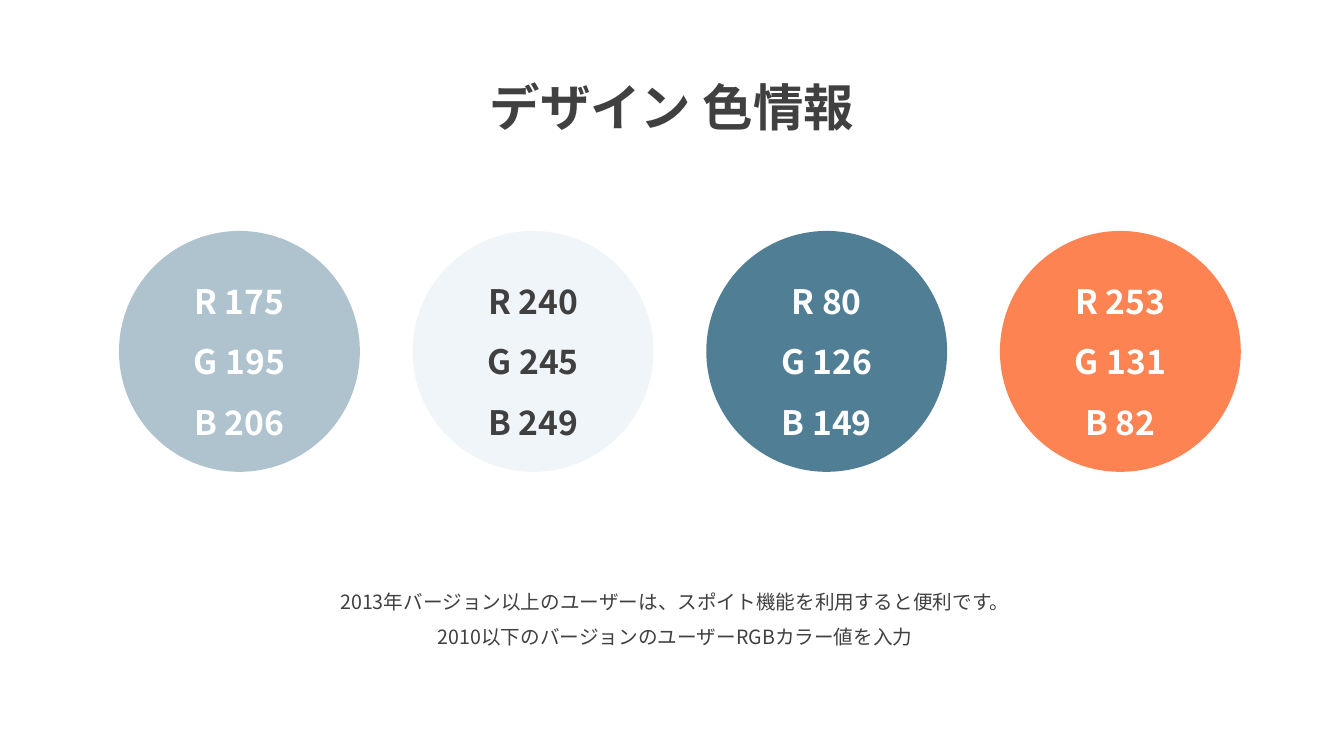
from dataclasses import dataclass

from lxml import etree
from pptx import Presentation
from pptx.dml.color import RGBColor
from pptx.enum.shapes import MSO_SHAPE
from pptx.enum.text import MSO_ANCHOR, MSO_AUTO_SIZE, PP_ALIGN
from pptx.oxml.ns import qn
from pptx.util import Cm, Pt

OVAL = MSO_SHAPE.OVAL
CENTER = PP_ALIGN.CENTER
TOP, MIDDLE = MSO_ANCHOR.TOP, MSO_ANCHOR.MIDDLE
FIXED, GROW = MSO_AUTO_SIZE.NONE, MSO_AUTO_SIZE.SHAPE_TO_FIT_TEXT

TITLE = ["デザイン 色情報"]
NOTES = [
    "2013年バージョン以上のユーザーは、スポイト機能を利用すると便利です。",
    "2010以下のバージョンのユーザーRGBカラー値を入力",
]
SWATCHES = [(175, 195, 206), (240, 245, 249), (80, 126, 149), (253, 131, 82)]

TITLE_BOX = (10.77, 1.02, 12.32, 2.31)
NOTES_BOX = (6.4, 14.43, 21.23, 1.96)
SWATCH_LEFT, SWATCH_TOP = 3.0, 5.82
SWATCH_SIZE, SWATCH_PITCH = 6.07, 7.4


@dataclass(frozen=True)
class Theme:
    font: str = "Noto Sans CJK KR"
    dark: RGBColor = RGBColor(64, 64, 64)
    light: RGBColor = RGBColor(255, 255, 255)
    title_size: int = 36
    swatch_size: int = 24
    note_size: int = 14
    line_spacing: float = 1.5
    pale_from: int = 230


THEME = Theme()


def write_lines(shape, lines, *, size, color, bold=False, anchor=TOP, fit=GROW):
    """Fill a shape with centred lines, one paragraph each."""
    frame = shape.text_frame
    frame.text = "\n".join(lines)
    frame.word_wrap = True
    frame.auto_size = fit
    frame.vertical_anchor = anchor
    for paragraph in frame.paragraphs:
        paragraph.alignment = CENTER
        paragraph.line_spacing = THEME.line_spacing
        paragraph.space_before = Pt(0)
        for run in paragraph.runs:
            font = run.font
            font.name = THEME.font
            font.size = Pt(size)
            font.bold = bold
            font.color.rgb = color
            properties = run._r.get_or_add_rPr()
            etree.SubElement(properties, qn("a:ea"), typeface=THEME.font)


def place(shape, box):
    shape.left, shape.top, shape.width, shape.height = map(Cm, box)


def add_swatch(slide, index, rgb):
    """Add a circle filled with the colour whose values it lists."""
    left = SWATCH_LEFT + index * SWATCH_PITCH
    box = (left, SWATCH_TOP, SWATCH_SIZE, SWATCH_SIZE)
    circle = slide.shapes.add_shape(OVAL, *map(Cm, box))
    circle.shadow.inherit = False
    circle.fill.solid()
    circle.fill.fore_color.rgb = RGBColor(*rgb)
    circle.line.fill.background()
    lines = [f"{channel} {value}" for channel, value in zip("RGB", rgb)]
    color = THEME.dark if min(rgb) >= THEME.pale_from else THEME.light
    write_lines(circle, lines, size=THEME.swatch_size, color=color,
                bold=True, anchor=MIDDLE, fit=FIXED)


def main():
    presentation = Presentation()
    presentation.slide_width, presentation.slide_height = Cm(33.87), Cm(19.05)
    slide = presentation.slides.add_slide(presentation.slide_layouts[0])

    title, notes = slide.placeholders
    place(title, TITLE_BOX)
    write_lines(title, TITLE, size=THEME.title_size, color=THEME.dark, bold=True)
    place(notes, NOTES_BOX)
    write_lines(notes, NOTES, size=THEME.note_size, color=THEME.dark)

    for index, rgb in enumerate(SWATCHES):
        add_swatch(slide, index, rgb)

    presentation.save("out.pptx")


if __name__ == "__main__":
    main()
